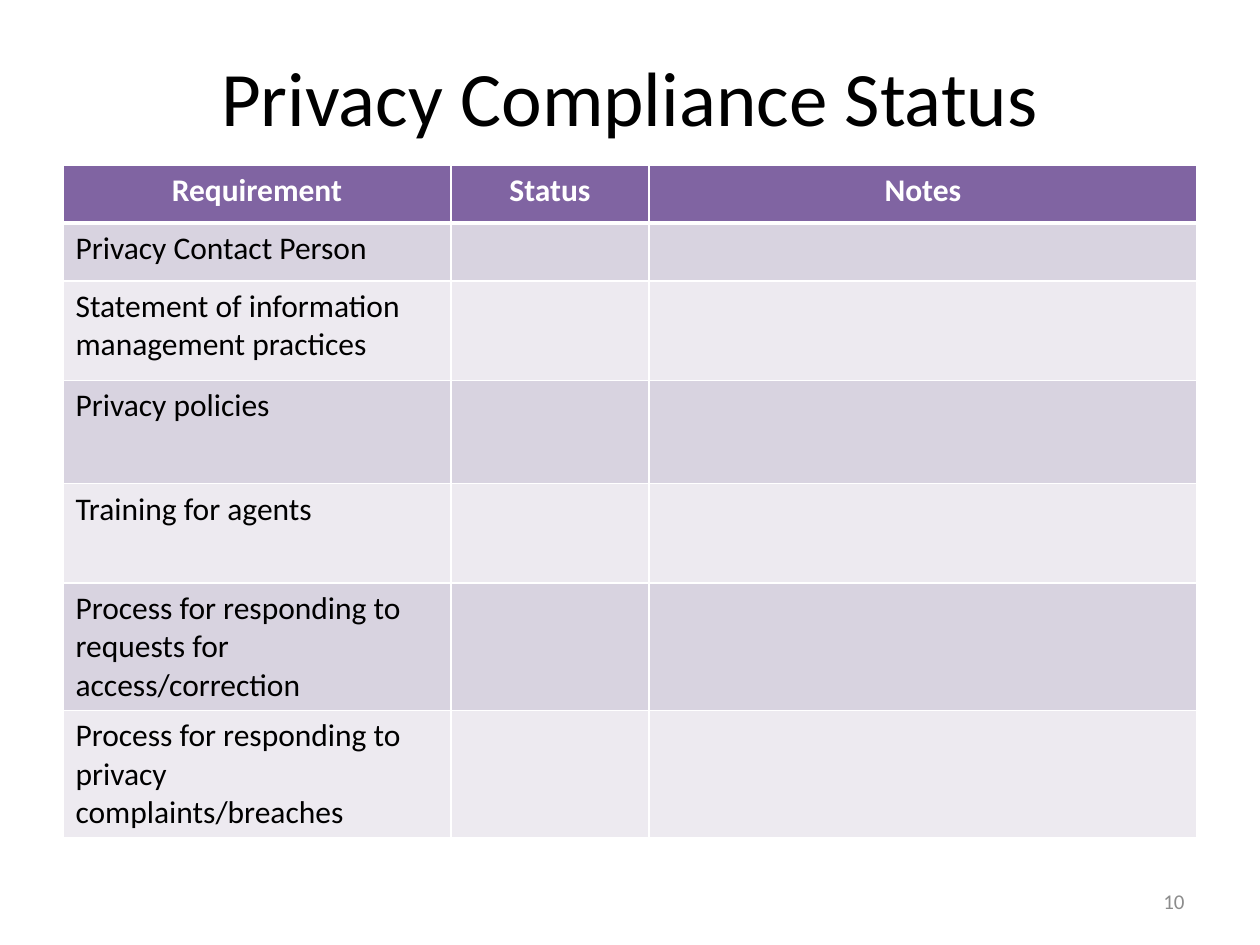
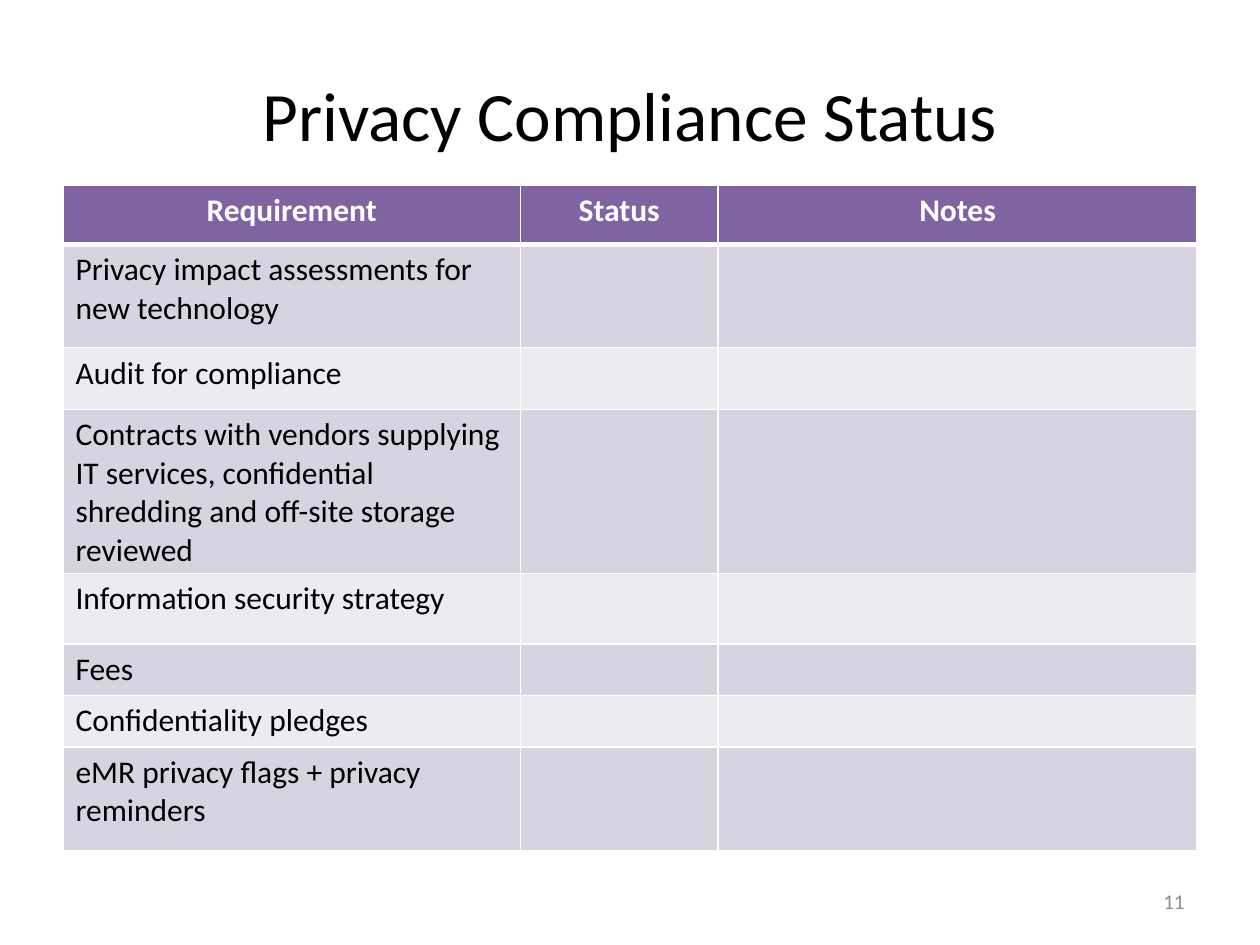
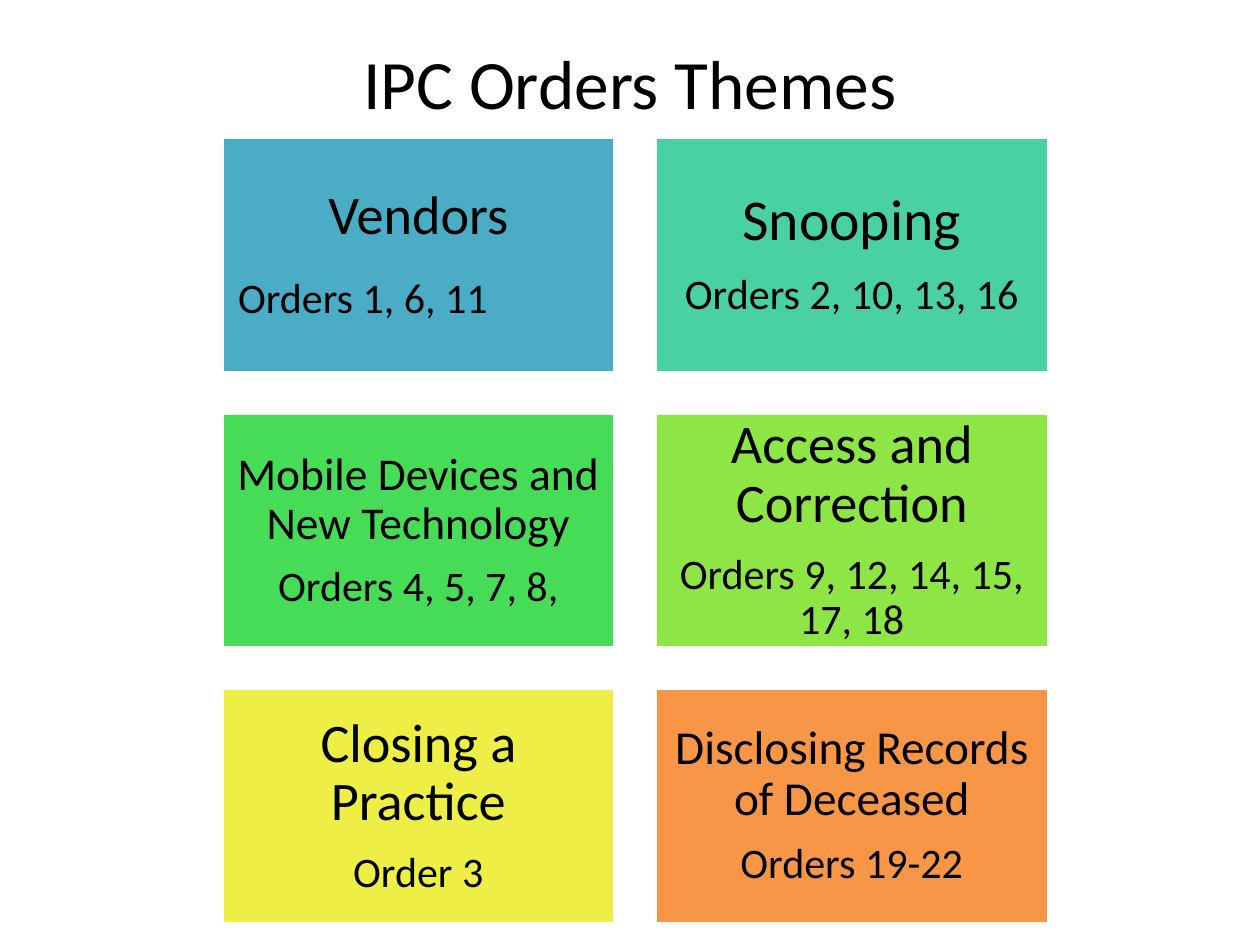
from dataclasses import dataclass
from itertools import product

from lxml import etree
from pptx import Presentation
from pptx.dml.color import RGBColor
from pptx.enum.shapes import MSO_SHAPE
from pptx.enum.text import MSO_ANCHOR, PP_ALIGN
from pptx.oxml.ns import qn
from pptx.util import Inches, Pt

RECTANGLE = MSO_SHAPE.RECTANGLE
MIDDLE = MSO_ANCHOR.MIDDLE
LEFT, CENTER, RIGHT = PP_ALIGN.LEFT, PP_ALIGN.CENTER, PP_ALIGN.RIGHT

COLORS = {
    "text": "000000",
    "page number": "8C8C8C",
    "white": "FFFFFF",
    "header": "8064A2",
    "odd row": "D8D3E0",
    "even row": "EDEAF0",
    "vendors": "4BACC6",
    "snooping": "49D1A3",
    "mobile": "47DC57",
    "access": "8DE646",
    "closing": "EEEF46",
    "deceased": "F79646",
}
FONT = "Calibri"
GRID_COLUMNS, GRID_ROWS = 100, 75
CELL = Inches(10) // GRID_COLUMNS
HEADINGS = ("Requirement", "Status", "Notes")
STATUS_WIDTH = 15.7


@dataclass
class Box:
    left: float
    top: float
    width: float
    height: float

    def place(self):
        return [cells(n) for n in (self.left, self.top, self.width, self.height)]


PAGE_NUMBER_BOX = Box(71.7, 69.5, 23.3, 4)
THEMES_BOX = Box(17.6, 10.9, 65.6, 62.4)

FIRST_REQUIREMENTS = [
    ("Privacy Contact Person", 4.6),
    ("Statement of information management practices", 7.9),
    ("Privacy policies", 8.2),
    ("Training for agents", 7.9),
    ("Process for responding to requests for access/correction", 10.1),
    ("Process for responding to privacy complaints/breaches", 10.1),
]
SECOND_REQUIREMENTS = [
    ("Privacy impact assessments for new technology", 8.2),
    ("Audit for compliance", 4.9),
    ("Contracts with vendors supplying IT services, confidential shredding "
     "and off-site storage reviewed", 12.5),
    ("Information security strategy", 5.6),
    ("Fees", 4.1),
    ("Confidentiality pledges", 4.1),
    ("eMR privacy flags + privacy reminders", 8.2),
]
THEMES = [
    ("vendors", "Vendors", 31, "Orders 1, 6, 11", LEFT, 7),
    ("snooping", "Snooping", 33, "Orders 2, 10, 13, 16", CENTER, 0),
    ("mobile", "Mobile Devices and New Technology", 26, "Orders 4, 5, 7, 8,", CENTER, 0),
    ("access", "Access and Correction", 31, "Orders 9, 12, 14, 15, 17, 18", CENTER, 0),
    ("closing", "Closing a Practice", 31, "Order 3", CENTER, 0),
    ("deceased", "Disclosing Records of Deceased", 27, "Orders 19-22", CENTER, 0),
]


def cells(count):
    return round(count * CELL)


def color(name):
    return RGBColor.from_string(COLORS[name])


def write(paragraph, text, size, color_name="text", alignment=LEFT, bold=False):
    paragraph.text = text
    paragraph.alignment = alignment
    for run in paragraph.runs:
        run.font.name = FONT
        run.font.size = Pt(size)
        run.font.bold = bold
        run.font.color.rgb = color(color_name)


def add_label(slide, box, text, size, color_name, alignment):
    frame = slide.shapes.add_textbox(*box.place()).text_frame
    frame.word_wrap = True
    frame.vertical_anchor = MIDDLE
    write(frame.paragraphs[0], text, size, color_name, alignment)


def add_titled_slide(presentation, title, title_box, size):
    slide = presentation.slides.add_slide(presentation.slide_layouts[6])
    add_label(slide, title_box, title, size, "text", CENTER)
    return slide


def set_borders(cell, top, bottom):
    properties = cell._tc.get_or_add_tcPr()
    for tag, width in (("lnL", 1), ("lnR", 1), ("lnT", top), ("lnB", bottom)):
        line = etree.SubElement(properties, qn(f"a:{tag}"), w=str(Pt(width)))
        fill = etree.SubElement(line, qn("a:solidFill"))
        etree.SubElement(fill, qn("a:srgbClr"), val=COLORS["white"])


def add_requirements_table(slide, box, requirement_width, header_height, requirements):
    rows = [HEADINGS] + [(name, "", "") for name, _ in requirements]
    heights = [header_height] + [height for _, height in requirements]
    widths = (requirement_width, STATUS_WIDTH, box.width - requirement_width - STATUS_WIDTH)
    table = slide.shapes.add_table(len(rows), len(widths), *box.place()).table
    table.first_row = table.horz_banding = False
    for column, width in zip(table.columns, widths):
        column.width = cells(width)
    for index, (row, height, texts) in enumerate(zip(table.rows, heights, rows)):
        row.height = cells(height)
        header = index == 0
        fill = "header" if header else "odd row" if index % 2 else "even row"
        for cell, text in zip(row.cells, texts):
            set_borders(cell, 3 if index == 1 else 1, 3 if header else 1)
            cell.fill.solid()
            cell.fill.fore_color.rgb = color(fill)
            write(cell.text_frame.paragraphs[0], text, 18,
                  "white" if header else "text", CENTER if header else LEFT, header)


def add_status_slide(presentation, number, title_box, title_size, table_box,
                     requirement_width, header_height, requirements):
    slide = add_titled_slide(presentation, "Privacy Compliance Status", title_box, title_size)
    add_requirements_table(slide, table_box, requirement_width, header_height, requirements)
    add_label(slide, PAGE_NUMBER_BOX, str(number), 12, "page number", RIGHT)


def add_theme(slide, box, fill, name, size, orders, alignment, extra_gap):
    shape = slide.shapes.add_shape(RECTANGLE, *box.place())
    shape.shadow.inherit = False
    shape.fill.solid()
    shape.fill.fore_color.rgb = color(fill)
    shape.line.color.rgb = color("white")
    shape.line.width = Pt(2)
    frame = shape.text_frame
    frame.word_wrap = True
    frame.vertical_anchor = MIDDLE
    inset = Pt(size * 0.3)
    frame.margin_left = frame.margin_right = inset
    frame.margin_top = frame.margin_bottom = inset
    heading, detail = frame.paragraphs[0], frame.add_paragraph()
    write(heading, name, size, alignment=CENTER)
    write(detail, orders, 24, alignment=alignment)
    heading.line_spacing = detail.line_spacing = 0.9
    heading.space_after = Pt(size * 0.35 + extra_gap)


def add_theme_grid(slide, box, columns=2, rows=3, gap=3.2):
    width = (box.width - gap * (columns - 1)) / columns
    height = (box.height - gap * (rows - 1)) / rows
    for (row, column), theme in zip(product(range(rows), range(columns)), THEMES):
        tile = Box(box.left + column * (width + gap), box.top + row * (height + gap),
                   width, height)
        add_theme(slide, tile, *theme)


def main():
    presentation = Presentation()
    presentation.slide_width = cells(GRID_COLUMNS)
    presentation.slide_height = cells(GRID_ROWS)
    add_status_slide(presentation, 10, Box(5, 2.9, 90, 9.4), 44,
                     Box(5, 13.1, 90, 53.2), 30.8, 4.6, FIRST_REQUIREMENTS)
    add_status_slide(presentation, 11, Box(5, 5.8, 90, 6.5), 39.6,
                     Box(5, 14.7, 90, 52.8), 36.3, 4.7, SECOND_REQUIREMENTS)
    themes_slide = add_titled_slide(presentation, "IPC Orders Themes", Box(5, 3, 90, 7), 39.6)
    add_theme_grid(themes_slide, THEMES_BOX)
    presentation.save("out.pptx")


if __name__ == "__main__":
    main()
